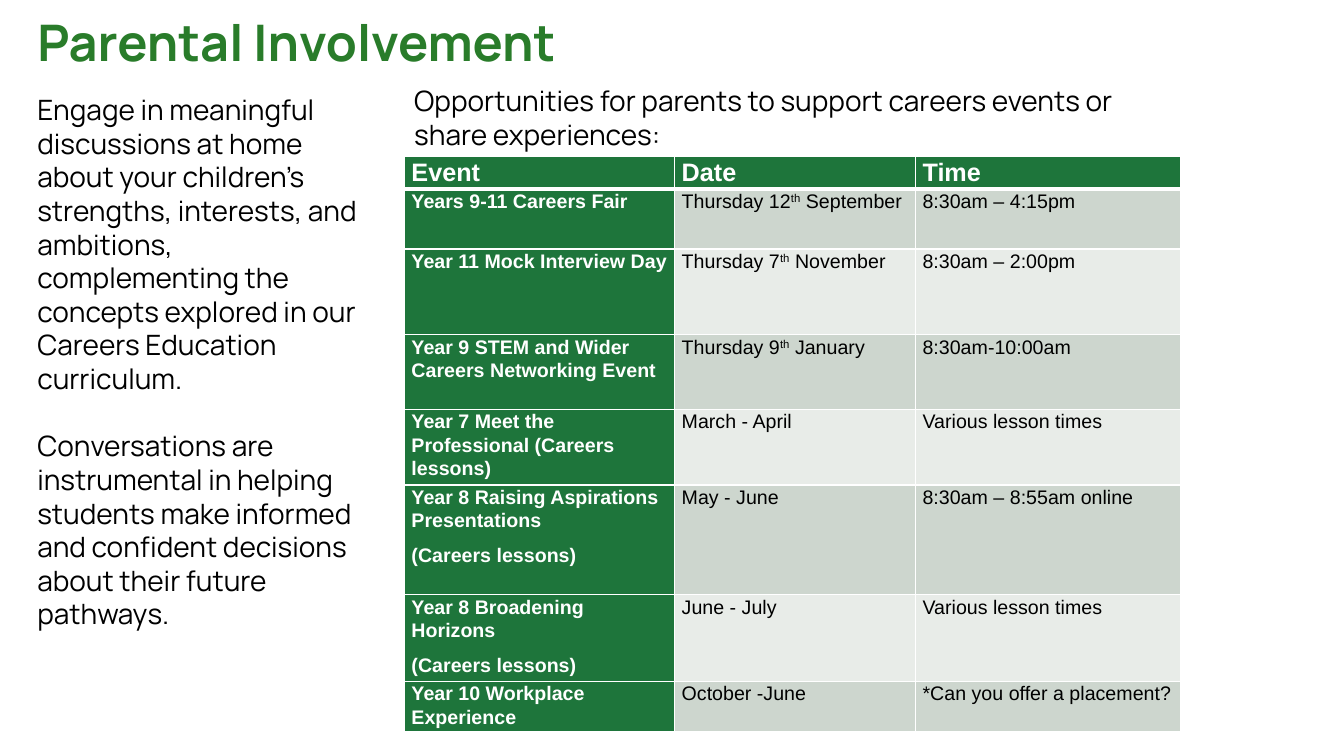
from lxml import etree
from pptx import Presentation
from pptx.dml.color import RGBColor
from pptx.oxml.ns import qn
from pptx.util import Cm, Pt

GREEN, WHITE, BLACK = "1E753B", "FFFFFF", "000000"
BANDS = ("CDD6CE", "E8ECE8")
COLS = (6.81, 6.07, 6.68)
ROWS = (
    (0.79, "Event", "Date", "Time"),
    (1.52, "Years 9-11 Careers Fair", "Thursday 12^th^ September", "8:30am – 4:15pm"),
    (2.16, "Year 11 Mock Interview Day", "Thursday 7^th^ November", "8:30am – 2:00pm"),
    (1.88, "Year 9 STEM and Wider Careers Networking Event",
     "Thursday 9^th^ January", "8:30am-10:00am"),
    (1.88, "Year 7 Meet the Professional (Careers lessons)",
     "March - April", "Various lesson times"),
    (2.77, "Year 8 Raising Aspirations Presentations\n(Careers lessons)",
     "May - June", "8:30am – 8:55am online"),
    (2.16, "Year 8 Broadening Horizons\n(Careers lessons)",
     "June - July", "Various lesson times"),
    (1.24, "Year 10 Workplace Experience", "October -June", "*Can you offer a placement?"),
)
ADVICE = (
    "Engage in meaningful discussions at home about your children’s strengths, "
    "interests, and ambitions, complementing the concepts explored in our "
    "Careers Education curriculum.\n"
    "Conversations are instrumental in helping students make informed and "
    "confident decisions about their future pathways."
)


def rgb(value):
    """Turn a hex string into a colour."""
    return RGBColor.from_string(value)


def write(tf, text, size=20, font="Manrope", color=BLACK, bold=False,
          spacing=None, before=0, after=0):
    """Fill a text frame; lines become paragraphs and ^marks^ superscript."""
    tf.word_wrap = True
    for i, line in enumerate(text.split("\n")):
        p = tf.add_paragraph() if i else tf.paragraphs[0]
        p.space_before = Pt(before if i else 0)
        p.space_after = Pt(after)
        if spacing:
            p.line_spacing = spacing
        for j, part in enumerate(line.split("^")):
            r = p.add_run()
            r.text = part
            r.font.size, r.font.name, r.font.bold = Pt(size), font, bold
            r.font.color.rgb = rgb(color)
            if j % 2:
                r.font._element.set("baseline", "30000")


def text_block(s, box, text, **fmt):
    """Place a text box in the given box."""
    write(s.shapes.add_textbox(*map(Cm, box)).text_frame, text, **fmt)


def set_borders(cell, bottom):
    """Give a cell white borders, with its own bottom width."""
    tc_pr = cell._tc.get_or_add_tcPr()
    for side, width in (("L", 1), ("R", 1), ("T", 1), ("B", bottom)):
        ln = etree.SubElement(tc_pr, qn(f"a:ln{side}"), w=str(Pt(width)))
        fill = etree.SubElement(ln, qn("a:solidFill"))
        etree.SubElement(fill, qn("a:srgbClr"), val=WHITE)


def events_table(s, box):
    """Place the table of events in the given box."""
    table = s.shapes.add_table(len(ROWS), len(COLS), *map(Cm, box)).table
    for col, width in zip(table.columns, COLS):
        col.width = Cm(width)
    for i, (height, *texts) in enumerate(ROWS):
        table.rows[i].height = Cm(height)
        for j, text in enumerate(texts):
            cell = table.cell(i, j)
            strong = i == 0 or j == 0
            cell.margin_left = cell.margin_right = Cm(0.18)
            cell.margin_top = cell.margin_bottom = 0
            set_borders(cell, 1 if i else 3)
            cell.fill.solid()
            cell.fill.fore_color.rgb = rgb(GREEN if strong else BANDS[(i - 1) % 2])
            write(cell.text_frame, text, size=14 if i else 18, font="Arial",
                  color=WHITE if strong else BLACK, bold=strong,
                  spacing=1.07, after=8)


def opportunities(s, left, top, width):
    """Place the introduction and the events table below it."""
    intro = 1.96
    events_table(s, (left, top + intro, width, sum(row[0] for row in ROWS)))
    text_block(s, (left, top, width, intro),
               "Opportunities for parents to support careers events or share experiences:")


def main():
    """Build and save the slide."""
    prs = Presentation()
    prs.slide_width, prs.slide_height = Cm(33.87), Cm(19.05)
    s = prs.slides.add_slide(prs.slide_layouts[6])
    text_block(s, (0.69, 0.33, 23.47, 2.11), "Parental Involvement",
               size=36, color="297C2A", bold=True, spacing=0.9)
    text_block(s, (0.69, 2.21, 8.81, 16.84), ADVICE, before=24)
    opportunities(s, 10.19, 1.98, sum(COLS))
    prs.save("out.pptx")


if __name__ == "__main__":
    main()
